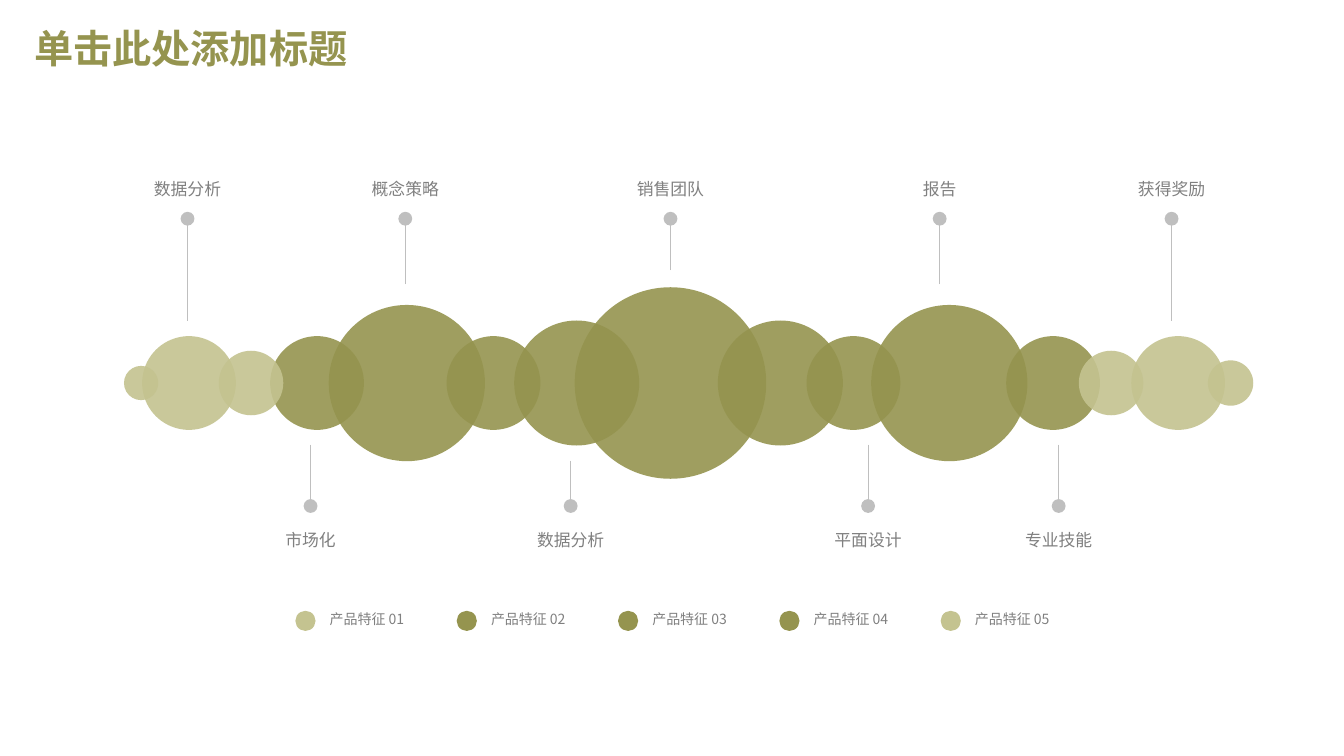
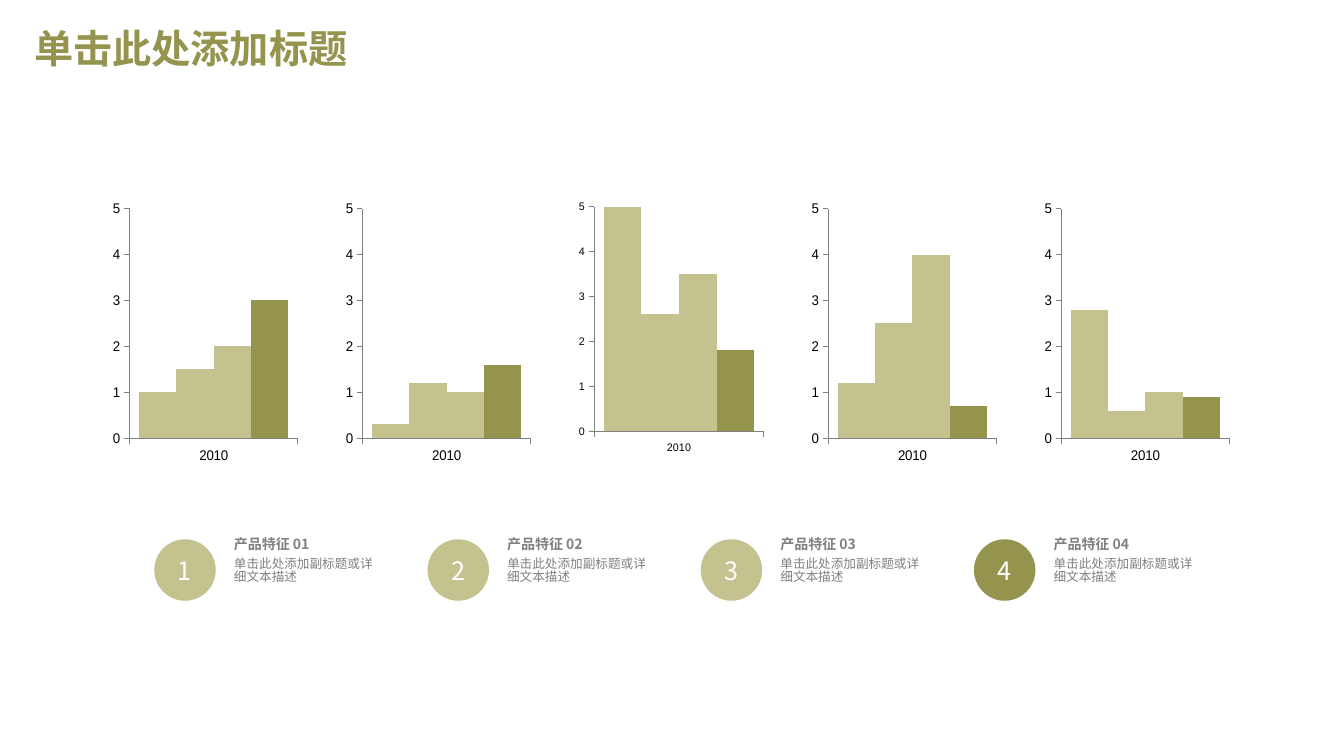
import lxml.etree
import pptx
import pptx.chart.data
import pptx.dml.color
import pptx.enum.chart
import pptx.enum.shapes
import pptx.enum.text
import pptx.oxml
import pptx.oxml.ns
import pptx.util

Inches = pptx.util.Inches
Pt = pptx.util.Pt
qn = pptx.oxml.ns.qn

COLORS = {
    "olive": "95944F",
    "pale": "C4C390",
    "line": "BFBFBF",
    "text": "808080",
    "axis": "808080",
    "white": "FFFFFF",
    "black": "000000",
}
BODY_FONT = "Noto Sans CJK SC"
TITLE_FONT = "Montserrat"
CHART_FONT = "Arial"
TITLE = "单击此处添加标题"
SUBTITLE = "单击此处添加副标题或详细文本描述"
FEATURE = "产品特征 {:02d}"

BAND_CENTER = 3.8
BUBBLES = [
    (5.7, 1.9, "olive"),
    (3.26, 1.55, "olive"),
    (1.41, 0.93, "pale"),
    (8.64, 1.55, "olive"),
    (11.22, 0.93, "pale"),
    (5.1, 1.24, "olive"),
    (7.12, 1.24, "olive"),
    (4.43, 0.93, "olive"),
    (2.68, 0.93, "olive"),
    (2.17, 0.64, "pale"),
    (1.23, 0.34, "pale"),
    (8, 0.93, "olive"),
    (9.98, 0.93, "olive"),
    (10.7, 0.64, "pale"),
    (11.98, 0.45, "pale"),
]
UPPER_CALLOUTS = [
    ("数据分析", 1.86, 3.18),
    ("概念策略", 4.02, 2.82),
    ("销售团队", 6.65, 2.68),
    ("报告", 9.32, 2.82),
    ("获得奖励", 11.62, 3.18),
]
LOWER_CALLOUTS = [
    ("市场化", 3.08, 4.41),
    ("数据分析", 5.66, 4.57),
    ("平面设计", 8.61, 4.41),
    ("专业技能", 10.5, 4.41),
]
LEGEND_COLORS = ["pale", "olive", "olive", "olive", "pale"]
SERIES_COLORS = ["pale", "pale", "pale", "olive"]
CHARTS = [
    ((1, 1.5, 2, 3), 10, 0.03),
    ((0.3, 1.2, 1, 1.6), 10, 0.03),
    ((5, 2.6, 3.5, 1.8), 8, 0),
    ((1.2, 2.5, 4, 0.7), 10, 0.03),
    ((2.8, 0.6, 1, 0.9), 10, 0.03),
]


def rgb(color):
    return pptx.dml.color.RGBColor.from_string(COLORS[color])


def style_paragraph(paragraph, size, color, bold=False, font_name=BODY_FONT):
    font = paragraph.font
    font.size = Pt(size)
    font.bold = bold
    font.color.rgb = rgb(color)
    font.name = font_name
    properties = paragraph._p.pPr.find(qn("a:defRPr"))
    east_asian = lxml.etree.SubElement(properties, qn("a:ea"))
    east_asian.set("typeface", BODY_FONT)


def add_text(slide, text, left, top, width, height, size, color="text",
             bold=False, centered=False, spacing=0.9):
    box = slide.shapes.add_textbox(
        Inches(left), Inches(top), Inches(width), Inches(height))
    frame = box.text_frame
    frame.word_wrap = not centered
    frame.margin_left = frame.margin_right = 0
    frame.margin_top = frame.margin_bottom = 0
    paragraph = frame.paragraphs[0]
    paragraph.text = text
    paragraph.line_spacing = spacing
    if centered:
        paragraph.alignment = pptx.enum.text.PP_ALIGN.CENTER
    style_paragraph(paragraph, size, color, bold)


def add_title(slide):
    box = slide.shapes.add_textbox(
        Inches(0.24), Inches(0.2), Inches(11.5), Inches(0.6))
    frame = box.text_frame
    frame.word_wrap = True
    frame.vertical_anchor = pptx.enum.text.MSO_ANCHOR.MIDDLE
    paragraph = frame.paragraphs[0]
    paragraph.text = TITLE
    paragraph.line_spacing = 0.9
    style_paragraph(paragraph, 28, "olive", True, TITLE_FONT)


def add_circle(slide, left, top, diameter, color, opacity=100):
    shape = slide.shapes.add_shape(
        pptx.enum.shapes.MSO_SHAPE.OVAL, Inches(left), Inches(top),
        Inches(diameter), Inches(diameter))
    shape.shadow.inherit = False
    shape.fill.solid()
    shape.fill.fore_color.rgb = rgb(color)
    shape.line.fill.background()
    if opacity < 100:
        fill_color = shape._element.spPr.find(qn("a:solidFill"))[0]
        alpha = lxml.etree.SubElement(fill_color, qn("a:alpha"))
        alpha.set("val", str(opacity * 1000))
    return shape


def add_callout(slide, text, center, start, dot, label_top):
    connector = slide.shapes.add_connector(
        pptx.enum.shapes.MSO_CONNECTOR.STRAIGHT,
        Inches(center), Inches(start), Inches(center), Inches(dot))
    connector.line.color.rgb = rgb("line")
    connector.line.width = Pt(0.5)
    properties = connector._element.spPr
    tail = lxml.etree.SubElement(properties.find(qn("a:ln")), qn("a:tailEnd"))
    for name, value in (("type", "oval"), ("w", "lg"), ("len", "lg")):
        tail.set(name, value)
    lxml.etree.SubElement(properties, qn("a:effectLst"))
    width = 0.8
    add_text(slide, text, center - width / 2, label_top, width, 0.2, 12,
             centered=True, spacing=1.0)


def add_legend_entry(slide, number, left, color):
    add_circle(slide, left, 6.06, 0.2, color)
    add_text(slide, FEATURE.format(number), left + 0.34, 6.08, 1.45, 0.35, 10)


def add_step(slide, number, left, color):
    text_left = left + 0.79
    add_text(slide, SUBTITLE, text_left, 5.53, 1.45, 0.42, 9)
    add_text(slide, FEATURE.format(number), text_left, 5.33, 1.45, 0.35, 10,
             bold=True)
    circle = add_circle(slide, left, 5.35, 0.61, color)
    circle.text_frame.vertical_anchor = pptx.enum.text.MSO_ANCHOR.MIDDLE
    paragraph = circle.text_frame.paragraphs[0]
    paragraph.text = str(number)
    paragraph.alignment = pptx.enum.text.PP_ALIGN.CENTER
    style_paragraph(paragraph, 18, "white")


def set_plot_layout(chart, x, y, width, height):
    plot_area = chart._chartSpace.chart.plotArea
    old_layout = plot_area.find(qn("c:layout"))
    if old_layout is not None:
        plot_area.remove(old_layout)
    layout = lxml.etree.Element(qn("c:layout"))
    manual = lxml.etree.SubElement(layout, qn("c:manualLayout"))
    settings = [("layoutTarget", "inner"), ("xMode", "edge"),
                ("yMode", "edge"), ("x", x), ("y", y),
                ("w", width), ("h", height)]
    for name, value in settings:
        lxml.etree.SubElement(manual, qn("c:" + name)).set("val", str(value))
    plot_area.insert(0, layout)


def add_column_chart(slide, left, values, size, plot_top):
    data = pptx.chart.data.CategoryChartData()
    data.categories = ["2010"]
    for number, value in enumerate(values, 1):
        data.add_series(f"Series {number}", [value])
    chart = slide.shapes.add_chart(
        pptx.enum.chart.XL_CHART_TYPE.COLUMN_CLUSTERED, Inches(left),
        Inches(1.99), Inches(1.87), Inches(2.65), data).chart
    chart.has_legend = False
    chart.has_title = False
    chart.font.size = Pt(size)
    chart.font.name = CHART_FONT
    chart.font.color.rgb = rgb("black")
    plot = chart.plots[0]
    plot.gap_width = 50
    plot.overlap = 0
    plot.vary_by_categories = False
    for series, color in zip(plot.series, SERIES_COLORS):
        series.format.fill.solid()
        series.format.fill.fore_color.rgb = rgb(color)
    for axis in (chart.category_axis, chart.value_axis):
        axis.has_major_gridlines = False
        axis.major_tick_mark = pptx.enum.chart.XL_TICK_MARK.OUTSIDE
        axis.minor_tick_mark = pptx.enum.chart.XL_TICK_MARK.NONE
        axis.format.line.color.rgb = rgb("axis")
    chart.value_axis.minimum_scale = 0
    chart.value_axis.maximum_scale = 5
    chart.value_axis.major_unit = 1
    set_plot_layout(chart, 0.04, plot_top, 0.94, 0.86)


def build_bubble_slide(slide):
    add_title(slide)
    for left, diameter, color in BUBBLES:
        add_circle(slide, left, BAND_CENTER - diameter / 2, diameter, color, 90)
    for text, center, start in UPPER_CALLOUTS:
        add_callout(slide, text, center, start, 2.17, 1.77)
    for text, center, start in LOWER_CALLOUTS:
        add_callout(slide, text, center, start, 5.02, 5.26)
    for index, color in enumerate(LEGEND_COLORS):
        add_legend_entry(slide, index + 1, 2.93 + 1.6 * index, color)


def build_chart_slide(slide):
    add_title(slide)
    for index, (values, size, plot_top) in enumerate(CHARTS):
        add_column_chart(slide, 1.12 + 2.31 * index, values, size, plot_top)
    for index, color in enumerate(SERIES_COLORS):
        add_step(slide, index + 1, 1.53 + 2.71 * index, color)


def main():
    presentation = pptx.Presentation()
    presentation.slide_width = Inches(13.33)
    presentation.slide_height = Inches(7.5)
    blank_layout = presentation.slide_layouts[6]
    for build in (build_bubble_slide, build_chart_slide):
        build(presentation.slides.add_slide(blank_layout))
    presentation.save("out.pptx")


if __name__ == "__main__":
    main()
